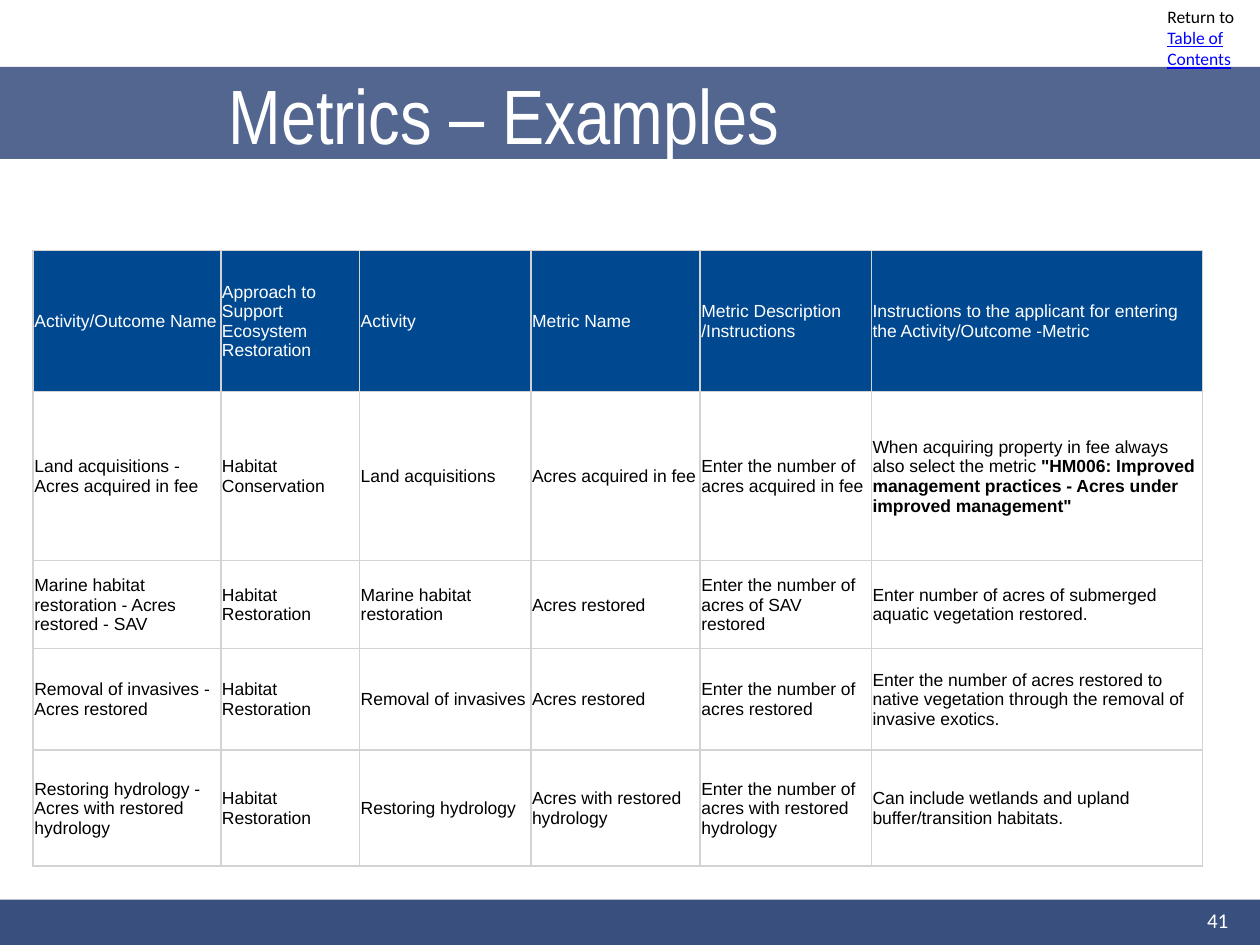
from lxml import etree
from pptx import Presentation
from pptx import util as u
from pptx.dml.color import RGBColor
from pptx.enum import shapes, text
from pptx.oxml import ns

Pt = u.Pt
NAVY, HEAD, GRID = "39507F", "004990", "D3D3D3"
WHITE, BLACK, LINK = "FFFFFF", "000000", "0000FF"

COLS = [107.2, 79.3, 97.9, 96.8, 97.8, 189.2]
ROWS = [80.8, 96.6, 50.1, 58, 66.5]

# Each cell is a string, or a pair of plain and bold text
CELLS = [
    ["Activity/Outcome Name", "Approach to Support Ecosystem Restoration",
     "Activity", "Metric Name", "Metric Description /Instructions",
     "Instructions to the applicant for entering the Activity/Outcome -Metric"],
    ["Land acquisitions - Acres acquired in fee", "Habitat Conservation",
     "Land acquisitions", "Acres acquired in fee",
     "Enter the number of acres acquired in fee",
     ("When acquiring property in fee always also select the metric ",
      '"HM006: Improved management practices - '
      'Acres under improved management"')],
    ["Marine habitat restoration - Acres restored - SAV",
     "Habitat Restoration", "Marine habitat restoration", "Acres restored",
     "Enter the number of acres of SAV restored",
     "Enter number of acres of submerged aquatic vegetation restored."],
    ["Removal of invasives - Acres restored", "Habitat Restoration",
     "Removal of invasives", "Acres restored",
     "Enter the number of acres restored",
     "Enter the number of acres restored to native vegetation "
     "through the removal of invasive exotics."],
    ["Restoring hydrology - Acres with restored hydrology",
     "Habitat Restoration", "Restoring hydrology",
     "Acres with restored hydrology",
     "Enter the number of acres with restored hydrology",
     "Can include wetlands and upland buffer/transition habitats."],
]


def rgb(code):
    return RGBColor.from_string(code)


def style(para, size, face, color):
    para.font.size = Pt(size)
    para.font.name = face
    para.font.color.rgb = rgb(color)


def add_bar(slide, top, height, alpha=None):
    bar = slide.shapes.add_shape(shapes.MSO_SHAPE.RECTANGLE,
                                 0, Pt(top), Pt(720), Pt(height))
    bar.shadow.inherit = False
    bar.fill.solid()
    bar.fill.fore_color.rgb = rgb(NAVY)
    bar.line.fill.background()
    if alpha:
        tint = bar.fill._xPr.find(".//" + ns.qn("a:srgbClr"))
        etree.SubElement(tint, ns.qn("a:alpha"), val=str(alpha * 1000))


def add_text(slide, words, left, top, width, height, size, face, color,
             anchor=text.MSO_ANCHOR.MIDDLE, align=text.PP_ALIGN.LEFT):
    box = slide.shapes.add_textbox(Pt(left), Pt(top), Pt(width), Pt(height))
    frame = box.text_frame
    frame.word_wrap = True
    frame.vertical_anchor = anchor
    para = frame.paragraphs[0]
    para.add_run().text = words
    para.alignment = align
    style(para, size, face, color)
    return para


def add_edges(cell):
    props = cell._tc.get_or_add_tcPr()
    for side in "LRTB":
        line = etree.SubElement(props, ns.qn("a:ln" + side), w=str(Pt(1)))
        fill = etree.SubElement(line, ns.qn("a:solidFill"))
        etree.SubElement(fill, ns.qn("a:srgbClr"), val=GRID)


def fill_cell(cell, words, head):
    cell.margin_left = cell.margin_right = cell.margin_top = Pt(0.7)
    cell.margin_bottom = 0
    cell.vertical_anchor = text.MSO_ANCHOR.MIDDLE
    add_edges(cell)
    if head:
        cell.fill.solid()
        cell.fill.fore_color.rgb = rgb(HEAD)
    else:
        cell.fill.background()
    para = cell.text_frame.paragraphs[0]
    parts = (words,) if isinstance(words, str) else words
    for i, part in enumerate(parts):
        run = para.add_run()
        run.text = part
        if i:
            run.font.bold = True
    style(para, 10, "Arial", WHITE if head else BLACK)


def add_grid(slide, left, top):
    grid = slide.shapes.add_table(len(ROWS), len(COLS), Pt(left), Pt(top),
                                  Pt(sum(COLS)), Pt(sum(ROWS))).table
    grid.first_row = grid.horz_banding = False
    for col, width in zip(grid.columns, COLS):
        col.width = Pt(width)
    for r, (row, height) in enumerate(zip(grid.rows, ROWS)):
        row.height = Pt(height)
        for cell, words in zip(row.cells, CELLS[r]):
            fill_cell(cell, words, r == 0)


def main():
    deck = Presentation()
    deck.slide_width, deck.slide_height = Pt(720), Pt(540)
    slide = deck.slides.add_slide(deck.slide_layouts[6])

    # Footer and title bars
    add_bar(slide, 514, 27)
    add_bar(slide, 38.3, 52.5, alpha=87)

    # Return note in the corner
    note = add_text(slide, "Return to ", 660, 0, 60, 44, 10, "Calibri", BLACK,
                    anchor=text.MSO_ANCHOR.TOP)
    link = note.add_run()
    link.text = "Table of Contents"
    link.font.underline = True
    link.font.color.rgb = rgb(LINK)

    # Title, table and page number
    add_text(slide, "Metrics – Examples", 123.5, 20, 539, 90,
             44, "Arial Narrow", WHITE)
    add_grid(slide, 19, 143)
    add_text(slide, "41", 541, 511.5, 168, 29, 12, "Calibri", WHITE,
             align=text.PP_ALIGN.RIGHT)

    deck.save("out.pptx")


if __name__ == "__main__":
    main()
